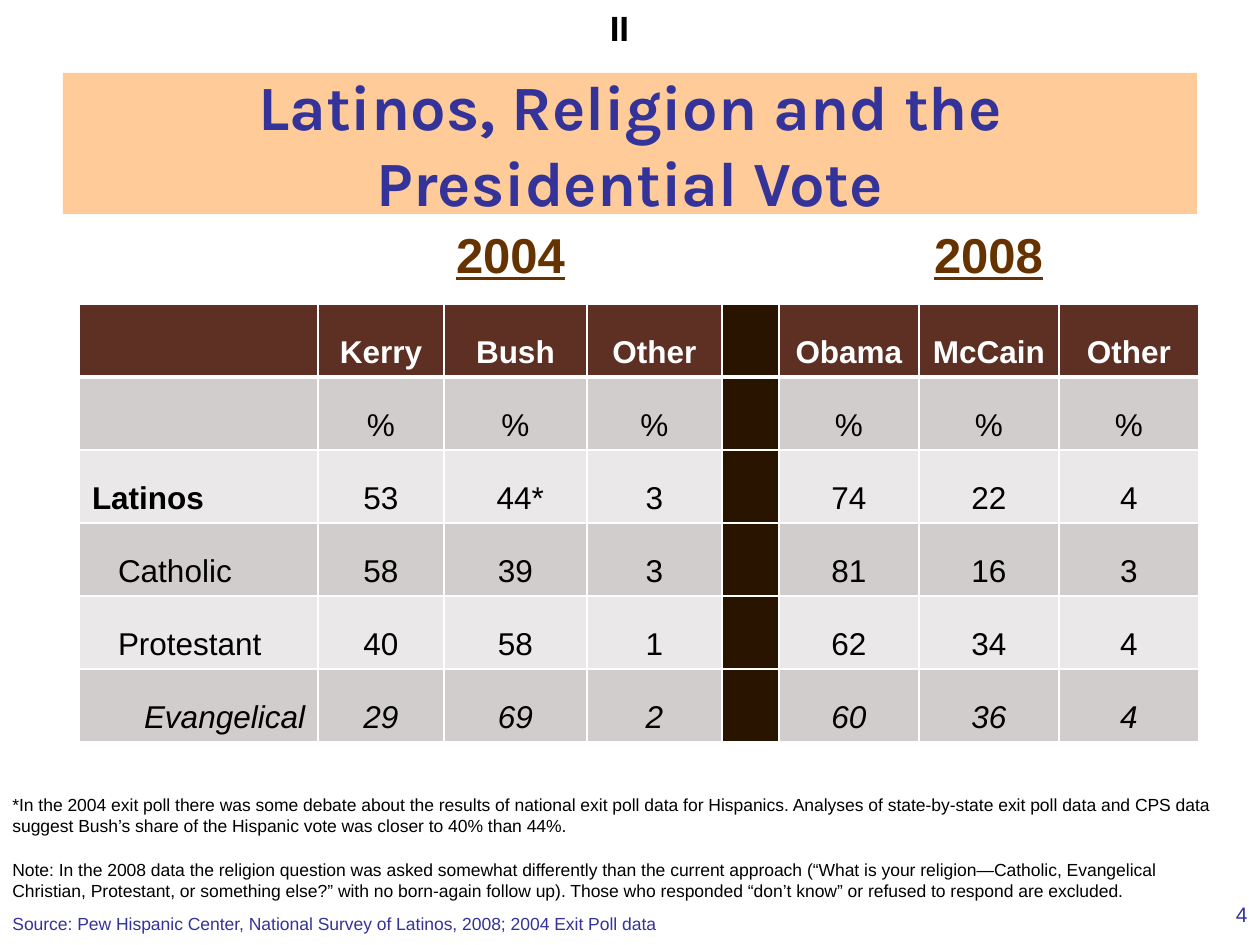
from lxml import etree
from pptx import Presentation
from pptx.dml.color import RGBColor
from pptx.enum.shapes import MSO_SHAPE
from pptx.enum.text import MSO_ANCHOR, PP_ALIGN
from pptx.oxml.ns import qn
from pptx.util import Emu, Pt

SCALE = 914400 / 126
LEFT, CENTER, RIGHT = PP_ALIGN.LEFT, PP_ALIGN.CENTER, PP_ALIGN.RIGHT
TOP, MIDDLE, BOTTOM = MSO_ANCHOR.TOP, MSO_ANCHOR.MIDDLE, MSO_ANCHOR.BOTTOM

BLACK = RGBColor(0x00, 0x00, 0x00)
WHITE = RGBColor(0xFF, 0xFF, 0xFF)
INDIGO = RGBColor(0x33, 0x33, 0x99)
PEACH = RGBColor(0xFF, 0xCC, 0x99)
BROWN = RGBColor(0x66, 0x33, 0x00)
HEADER = RGBColor(0x5E, 0x2F, 0x23)
DIVIDER = RGBColor(0x29, 0x14, 0x00)
BANDS = RGBColor(0xEA, 0xE8, 0xE8), RGBColor(0xD2, 0xCD, 0xCD)

# Content
TITLE = "Latinos, Religion and the Presidential Vote"
NOTES = [
    "*In the 2004 exit poll there was some debate about the results of national exit poll data "
    "for Hispanics. Analyses of state-by-state exit poll data and CPS data suggest Bush’s share "
    "of the Hispanic vote was closer to 40% than 44%.",
    "Note: In the 2008 data the religion question was asked somewhat differently than the current "
    "approach (“What is your religion—Catholic, Evangelical Christian, Protestant, or something "
    "else?” with no born-again follow up). Those who responded “don’t know” or refused to respond "
    "are excluded.",
]
SOURCE = "Source: Pew Hispanic Center, National Survey of Latinos, 2008; 2004 Exit Poll data"
ROWS = [
    ["", "Kerry", "Bush", "Other", "", "Obama", "McCain", "Other"],
    ["", "%", "%", "%", "", "%", "%", "%"],
    ["Latinos", "53", "44*", "3", "", "74", "22", "4"],
    ["Catholic", "58", "39", "3", "", "81", "16", "3"],
    ["Protestant", "40", "58", "1", "", "62", "34", "4"],
    ["Evangelical", "29", "69", "2", "", "60", "36", "4"],
]
INDENT_LEVELS = {"Catholic": 1, "Protestant": 1, "Evangelical": 2}
COLUMN_WIDTHS = [239, 126, 143, 135, 57, 140, 140, 140]
ROW_HEIGHT = 73
DIVIDER_COLUMN = 4

# Text boxes: texts, (left, top, width, height), alignment, wrap, font
YEAR_FONT = {"size": Pt(28), "bold": True, "underline": True}
TEXT_BOXES = [
    (["II"], (567, 0, 105, 55), CENTER, True, {"size": Pt(20), "bold": True}, BLACK),
    (["2004"], (417, 218, 187, 72), CENTER, True, YEAR_FONT, BROWN),
    (["2008"], (895, 218, 187, 72), CENTER, True, YEAR_FONT, BROWN),
    (NOTES, (0, 788, 1236, 96), LEFT, True, {"size": Pt(10)}, BLACK),
    (["4"], (966, 895, 294, 50), RIGHT, True, {"size": Pt(12)}, INDIGO),
    ([SOURCE], (0, 907, 674, 34), LEFT, False, {"size": Pt(10)}, INDIGO),
]


def px(value):
    return Emu(round(value * SCALE))


def write(text_frame, texts, alignment, font, color):
    for index, text in enumerate(texts):
        paragraph = text_frame.paragraphs[0] if index == 0 else text_frame.add_paragraph()
        paragraph.text = text
        paragraph.alignment = alignment
        if index:
            paragraph.space_before = Pt(13)
        for name, value in {"name": "Arial", **font}.items():
            setattr(paragraph.font, name, value)
        paragraph.font.color.rgb = color


def add_borders(cell, widths):
    properties = cell._tc.get_or_add_tcPr()
    for side in "LRTB":
        line = etree.SubElement(properties, qn(f"a:ln{side}"), w=str(Pt(widths.get(side, 1))))
        fill = etree.SubElement(line, qn("a:solidFill"))
        etree.SubElement(fill, qn("a:srgbClr"), val=str(WHITE))


def format_cell(cell, row, column, text):
    add_borders(cell, {0: {"B": 3}, 1: {"T": 3}}.get(row, {}))
    color = DIVIDER if column == DIVIDER_COLUMN else BANDS[row % 2] if row else HEADER
    cell.fill.solid()
    cell.fill.fore_color.rgb = color
    cell.vertical_anchor = BOTTOM
    if column == 0:
        cell.margin_left = px(13 + 26 * INDENT_LEVELS.get(text, 0))
        cell.margin_right = px(4)
    elif text.endswith("*"):
        cell.margin_left = px(22)
    font = {
        "size": Pt(18),
        "bold": row == 0 or text == "Latinos",
        "italic": row == len(ROWS) - 1,
    }
    write(cell.text_frame, [text], CENTER if column else LEFT, font, BLACK if row else WHITE)


presentation = Presentation()
presentation.slide_width, presentation.slide_height = px(1260), px(945)
slide = presentation.slides.add_slide(presentation.slide_layouts[6])

# Title band
band = slide.shapes.add_shape(MSO_SHAPE.RECTANGLE, *map(px, (63, 73, 1134, 141)))
band.shadow.inherit = False
band.fill.solid()
band.fill.fore_color.rgb = PEACH
band.line.fill.background()
band.text_frame.word_wrap = True
band.text_frame.vertical_anchor = MIDDLE
write(band.text_frame, [TITLE], CENTER, {"name": "Karla", "size": Pt(36), "bold": True}, INDIGO)

# Vote table
frame = slide.shapes.add_table(
    len(ROWS), len(COLUMN_WIDTHS),
    *map(px, (79, 304, sum(COLUMN_WIDTHS), ROW_HEIGHT * len(ROWS))))
table = frame.table
for column, width in zip(table.columns, COLUMN_WIDTHS):
    column.width = px(width)
for row_index, texts in enumerate(ROWS):
    table.rows[row_index].height = px(ROW_HEIGHT)
    for column_index, text in enumerate(texts):
        format_cell(table.cell(row_index, column_index), row_index, column_index, text)

# Headings, notes, source and page number
for texts, bounds, alignment, wrap, font, color in TEXT_BOXES:
    text_frame = slide.shapes.add_textbox(*map(px, bounds)).text_frame
    text_frame.word_wrap = wrap
    text_frame.vertical_anchor = TOP
    write(text_frame, texts, alignment, font, color)

presentation.save("out.pptx")
